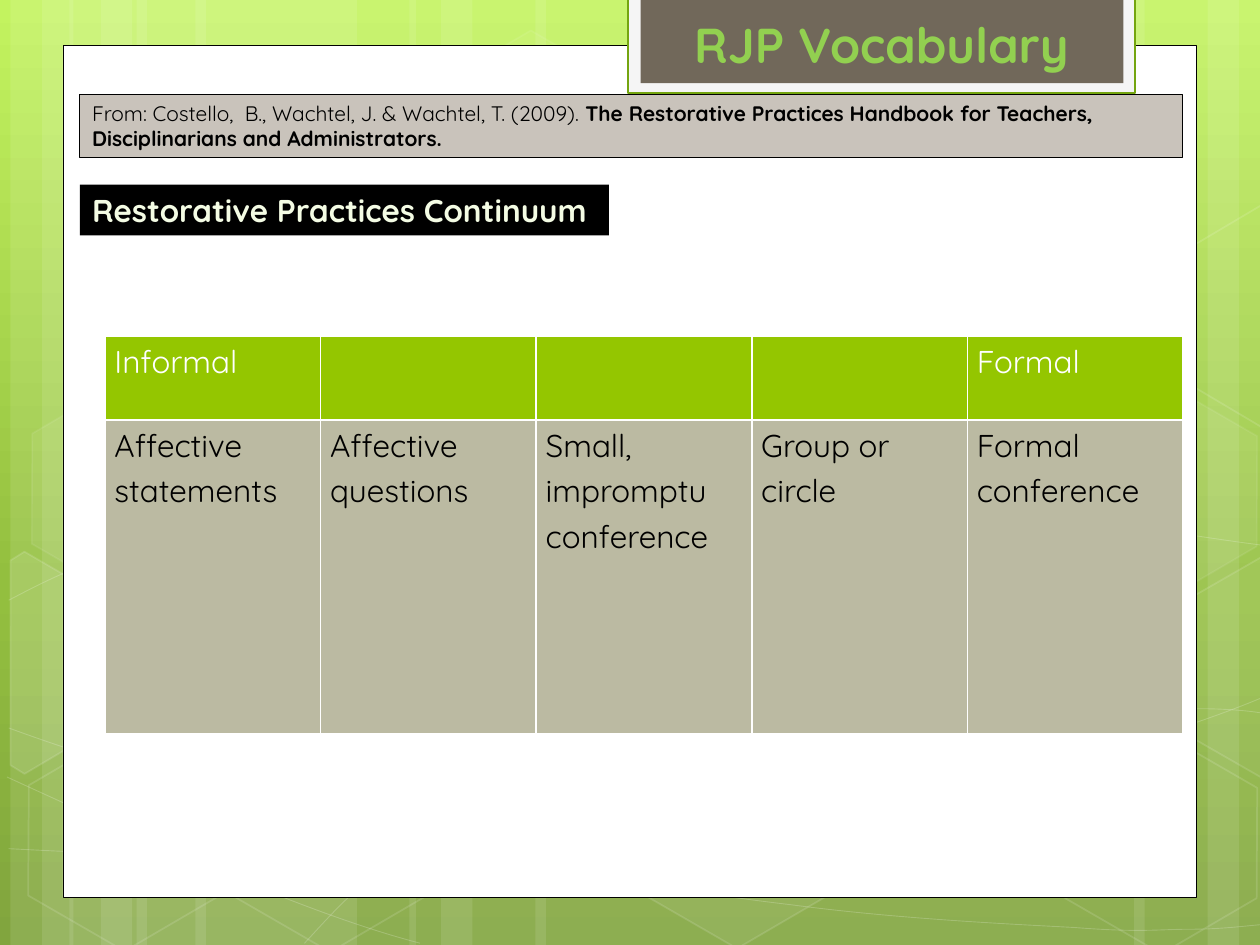
from dataclasses import dataclass
from math import cos, radians, sin
from typing import Any, Optional

from lxml.etree import SubElement
from pptx import Presentation
from pptx.dml.color import RGBColor
from pptx.enum.shapes import MSO_SHAPE
from pptx.enum.text import MSO_ANCHOR, MSO_AUTO_SIZE, PP_ALIGN
from pptx.oxml.ns import qn
from pptx.util import Pt

WHITE = RGBColor(0xFF, 0xFF, 0xFF)
BLACK = RGBColor(0x00, 0x00, 0x00)
BANNER_EDGE = RGBColor(0xF5, 0xF5, 0xF5)
BANNER_LINE = RGBColor(0x74, 0xA5, 0x10)
BANNER_BROWN = RGBColor(0x71, 0x68, 0x5A)
TITLE_GREEN = RGBColor(0x92, 0xD0, 0x50)
SOURCE_GRAY = RGBColor(0xC9, 0xC3, 0xBB)
HEADING_CREAM = RGBColor(0xF4, 0xFC, 0xE4)
HEADER_GREEN = RGBColor(0x94, 0xC6, 0x00)
BODY_OLIVE = RGBColor(0xBB, 0xBA, 0xA2)
SKY = ((0, RGBColor(0xC3, 0xF3, 0x5F)), (62, RGBColor(0x93, 0xBF, 0x3F)),
       (100, RGBColor(0x81, 0xA5, 0x3E)))
FONT = "Quicksand"
TILT = 30


@dataclass
class Paint:
    fill: Optional[RGBColor] = None
    line: Optional[RGBColor] = None
    width: float = 1
    fill_alpha: int = 100
    line_alpha: int = 100


@dataclass
class Box:
    left: float
    top: float
    width: float
    height: float
    paint: Paint
    rotation: float = 0


@dataclass
class Span:
    text: str
    size: float
    color: RGBColor
    bold: bool = False


@dataclass
class CutHexagon:
    center: tuple[float, float]
    corners: list[tuple[float, float]]
    paint: Paint


def glass(fill_alpha: int, line_alpha: int) -> Paint:
    return Paint(WHITE if fill_alpha else None, WHITE, 1, fill_alpha, line_alpha)


STRIPE = Paint(WHITE, fill_alpha=10)
CURVE = Paint(line=WHITE, width=0.5, line_alpha=20)
STRIPES = [(origin + offset, width, 0) for origin, wide in ((6, 126), (39.6, 126), (234, 222))
           for offset, width in ((72, wide), (0, 36), (18, 60))]
STRIPES += [(528, 126, 180), (690, 36, 180), (648, 60, 180)]
CURVES = [
    [(5, 485), (44, 487), (83, 489), (137, 488), (191, 487), (258, 486), (330, 479),
     (402, 472), (504, 458), (570, 444), (636, 431), (703, 407), (725, 397)],
    [(5, 343), (26, 332), (47, 321), (87, 310), (128, 300), (186, 284), (250, 279),
     (314, 274), (392, 273), (471, 279), (550, 284), (682, 307), (725, 312)],
    [(4, 444), (91, 484), (178, 523), (240, 539)],
    [(5, 416), (27, 424), (50, 432), (92, 444), (134, 454), (197, 472), (257, 485),
     (317, 497), (392, 510), (452, 517), (512, 525), (576, 528), (614, 530),
     (652, 533), (662, 531), (680, 531), (699, 531), (712, 529), (725, 528)],
    [(174, 539), (187, 525), (200, 510), (217, 498), (235, 485), (259, 470), (279, 460),
     (300, 450), (312, 446), (338, 438), (364, 431), (413, 421), (438, 416),
     (464, 411), (467, 411), (490, 410), (512, 408), (547, 405), (572, 405),
     (597, 404), (638, 405), (638, 405), (654, 405), (670, 405), (686, 405),
     (699, 405), (711, 406), (718, 407), (724, 408), (722, 407), (724, 408)],
]
HEXAGONS = [(240.5, 26, 4, 8), (358, 424, 6, 12), (8, 425.5, 0, 12), (10, 224.5, 7, 8),
            (125.5, 426, 0, 12), (542, 326, 10, 12), (600.5, 427, 0, 12), (600.5, 226, 7, 8)]
CUT_HEXAGONS = [
    CutHexagon((25.9, 385.2), [(6, 320), (14, 315), (69, 347), (68, 410), (14, 442), (6, 437)],
               glass(10, 12)),
    CutHexagon((709.2, 374.4), [(667, 349), (721, 318), (726, 321), (726, 441), (721, 444),
                                (667, 413)], glass(4, 12)),
    CutHexagon((709.2, 173.5), [(667, 149), (721, 117), (727, 121), (726, 241), (721, 244),
                                (667, 212)], glass(0, 12)),
]
PANELS = [Box(36, 26, 648, 487, Paint(WHITE, BLACK, 0.5)),
          Box(359, -1.5, 289.8, 54.7, Paint(BANNER_EDGE, BANNER_LINE, 1.25)),
          Box(366, -1.5, 276, 49, Paint(BANNER_BROWN))]
SOURCE = [Span("From: Costello,  B., Wachtel, J. & Wachtel, T. (2009). ", 12, BLACK),
          Span("The Restorative Practices Handbook for Teachers, "
               "Disciplinarians and Administrators.", 12, BLACK, True)]
HEADING = [Span("Restorative Practices Continuum", 18, HEADING_CREAM, True)]
ROWS = [(["Informal", "", "", "", "Formal"], 48, HEADER_GREEN, WHITE),
        (["Affective statements", "Affective questions", "Small, impromptu conference",
          "Group or circle", "Formal conference"], 179.5, BODY_OLIVE, BLACK)]


def apply(target: Any, values: dict) -> None:
    for name, value in values.items():
        setattr(target, name, value)


def paint_shape(shape: Any, paint: Paint) -> None:
    shape.shadow.inherit = False
    for part, color in ((shape.fill, paint.fill), (shape.line.fill, paint.line)):
        if color is None:
            part.background()
        else:
            part.solid()
            part.fore_color.rgb = color
    if paint.line is not None:
        shape.line.width = Pt(paint.width)
    for route, percent in (("p:spPr/a:solidFill/a:srgbClr", paint.fill_alpha),
                           ("p:spPr/a:ln/a:solidFill/a:srgbClr", paint.line_alpha)):
        for color in shape.element.xpath(route):
            if percent < 100:
                SubElement(color, qn("a:alpha")).set("val", str(percent * 1000))


def draw_box(page: Any, box: Box, kind: MSO_SHAPE = MSO_SHAPE.RECTANGLE) -> Any:
    shape = page.shapes.add_shape(kind, Pt(box.left), Pt(box.top), Pt(box.width), Pt(box.height))
    shape.rotation = box.rotation
    paint_shape(shape, box.paint)
    return shape


def draw_outline(page: Any, points: list, paint: Paint, close: bool) -> Any:
    corners = [(Pt(x), Pt(y)) for x, y in points]
    builder = page.shapes.build_freeform(*corners[0], scale=1.0)
    builder.add_line_segments(corners[1:], close=close)
    shape = builder.convert_to_shape()
    paint_shape(shape, paint)
    return shape


def draw_curve(page: Any, knots: list) -> None:
    shape = draw_outline(page, knots, CURVE, False)
    outline = shape.element.xpath(".//a:pathLst/*")[0]
    segments = outline.findall(qn("a:lnTo"))
    for start in range(0, len(segments), 3):
        bend = SubElement(outline, qn("a:cubicBezTo"))
        for segment in segments[start:start + 3]:
            bend.append(segment[0])
            outline.remove(segment)


def draw_cut_hexagon(page: Any, item: CutHexagon) -> None:
    cosine, sine = cos(radians(TILT)), sin(radians(TILT))
    middle_x, middle_y = item.center
    offsets = [(x - middle_x, y - middle_y) for x, y in item.corners]
    upright = [(middle_x + x * cosine + y * sine, middle_y - x * sine + y * cosine)
               for x, y in offsets]
    draw_outline(page, upright, item.paint, True).rotation = TILT


def write_spans(para: Any, spans: list[Span]) -> None:
    para.alignment = PP_ALIGN.LEFT
    for span in spans:
        run = para.add_run()
        run.text = span.text
        apply(run.font, {"name": FONT, "size": Pt(span.size), "bold": span.bold})
        run.font.color.rgb = span.color


def draw_text_box(page: Any, box: Box, spans: list[Span]) -> None:
    frame = draw_box(page, box).text_frame
    apply(frame, {"word_wrap": True, "vertical_anchor": MSO_ANCHOR.TOP,
                  "auto_size": MSO_AUTO_SIZE.SHAPE_TO_FIT_TEXT})
    write_spans(frame.paragraphs[0], spans)


def draw_background(page: Any) -> None:
    fill = page.background.fill
    fill.gradient()
    fill.gradient_angle = 270
    stops = page.element.xpath(".//p:bg//a:gsLst")[0]
    for stop in list(stops):
        stops.remove(stop)
    for position, color in SKY:
        stop = SubElement(stops, qn("a:gs"))
        stop.set("pos", str(position * 1000))
        SubElement(stop, qn("a:srgbClr")).set("val", str(color))


def draw_decoration(page: Any) -> None:
    for left, width, rotation in STRIPES:
        draw_box(page, Box(left, 0, width, 540, STRIPE, rotation))
    for knots in CURVES:
        draw_curve(page, knots)
    for left, top, fill_alpha, line_alpha in HEXAGONS:
        box = Box(left, top, 126, 109.5, glass(fill_alpha, line_alpha), TILT)
        draw_box(page, box, MSO_SHAPE.HEXAGON).adjustments[0] = 0.285
    for item in CUT_HEXAGONS:
        draw_cut_hexagon(page, item)


def place_title(page: Any) -> None:
    title = page.shapes.title
    apply(title, {"left": Pt(389.5), "top": Pt(-5.4), "width": Pt(260), "height": Pt(51)})
    apply(title.text_frame, {"word_wrap": True, "vertical_anchor": MSO_ANCHOR.BOTTOM,
                             "auto_size": MSO_AUTO_SIZE.NONE})
    write_spans(title.text_frame.paragraphs[0], [Span("RJP Vocabulary", 28, TITLE_GREEN, True)])
    title.element.getparent().append(title.element)


def format_cell(cell: Any, text: str, fill: RGBColor, color: RGBColor) -> None:
    apply(cell, {"margin_left": Pt(5.4), "margin_right": Pt(5.4),
                 "margin_top": 0, "margin_bottom": 0})
    if text:
        para = cell.text_frame.paragraphs[0]
        para.line_spacing = 1.15
        write_spans(para, [Span(text, 18, color)])
    properties = cell._tc.get_or_add_tcPr()
    for side in ("a:lnL", "a:lnR", "a:lnT", "a:lnB"):
        border = SubElement(properties, qn(side), w=str(Pt(1)))
        SubElement(SubElement(border, qn("a:solidFill")), qn("a:srgbClr")).set("val", str(WHITE))
    cell.fill.solid()
    cell.fill.fore_color.rgb = fill


def draw_table(page: Any) -> None:
    table = page.shapes.add_table(2, 5, Pt(60), Pt(192), Pt(616), Pt(227.5)).table
    for column in table.columns:
        column.width = Pt(123.2)
    for row, (texts, height, fill, color) in zip(table.rows, ROWS):
        row.height = Pt(height)
        for cell, text in zip(row.cells, texts):
            format_cell(cell, text, fill, color)


def main() -> None:
    deck = Presentation()
    apply(deck, {"slide_width": Pt(720), "slide_height": Pt(540)})
    page = deck.slides.add_slide(deck.slide_layouts[5])
    draw_background(page)
    draw_decoration(page)
    for panel in PANELS:
        draw_box(page, panel)
    place_title(page)
    draw_text_box(page, Box(45.6, 54, 630.2, 36, Paint(SOURCE_GRAY, BLACK, 0.75)), SOURCE)
    draw_text_box(page, Box(45.6, 105.5, 302.4, 29, Paint(BLACK)), HEADING)
    draw_table(page)
    deck.save("out.pptx")


if __name__ == "__main__":
    main()
